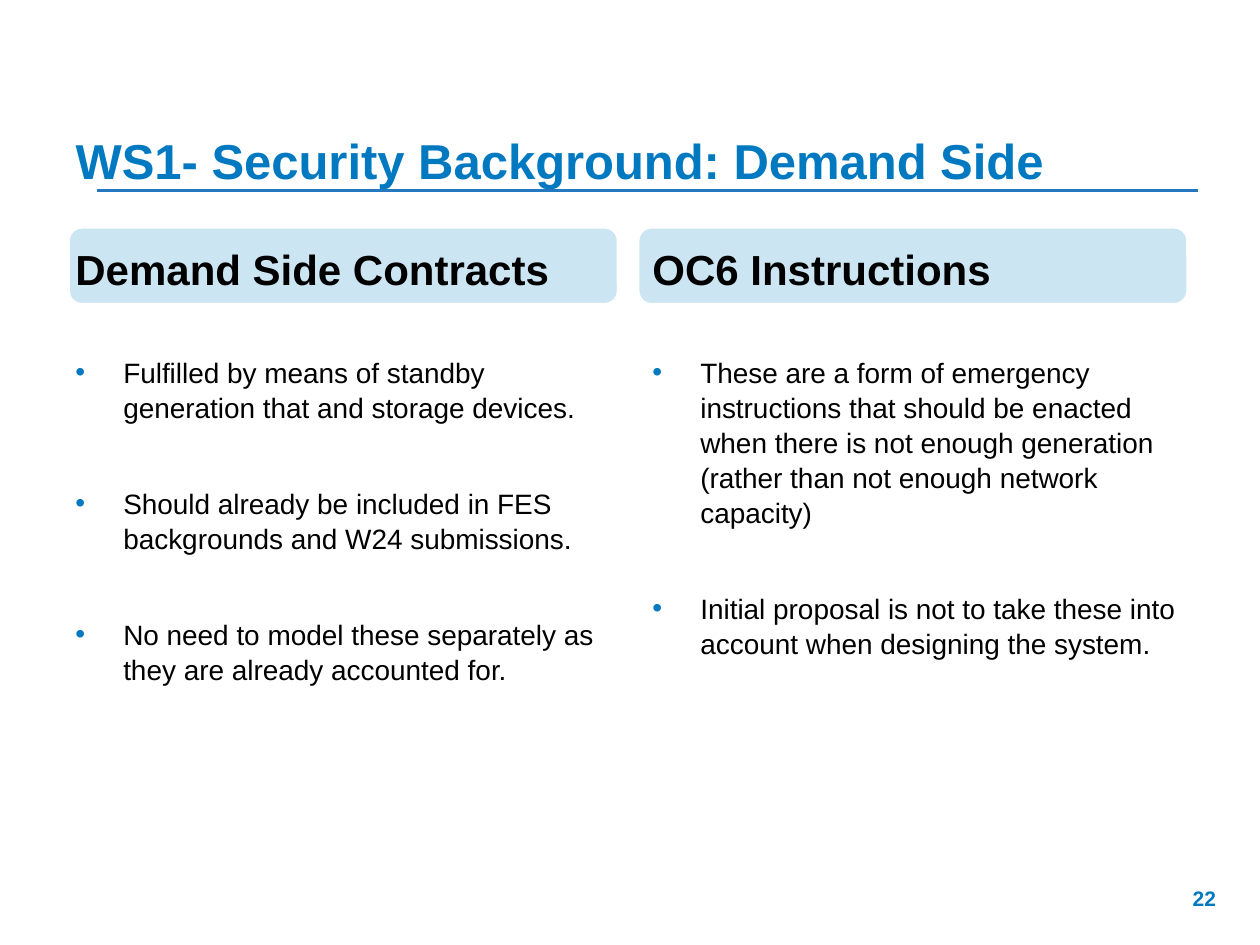
from pptx import Presentation
from pptx import util as u
from pptx.dml.color import RGBColor
from pptx.enum import shapes, text
from pptx.oxml.ns import qn
from lxml import etree

BLUE, PALE, RULE = "0079C1", "CCE5F2", "2478C0"
BLACK, WHITE = "000000", "FFFFFF"
COLS = [
    (0.5, 0.55, "Demand Side Contracts", [
        "Fulfilled by means of standby generation that and storage devices.",
        "Should already be included in FES backgrounds and W24 submissions.",
        "No need to model these separately as they are already accounted for."]),
    (5.08, 5.07, "OC6 Instructions", [
        "These are a form of emergency instructions that should be enacted "
        "when there is not enough generation (rather than not enough network capacity)",
        "Initial proposal is not to take these into account when designing the system."]),
]


def color(code):
    """Turn a hex string into a colour."""
    return RGBColor.from_string(code)


def bullet(par):
    """Give a paragraph a hanging blue bullet."""
    props = par._p.get_or_add_pPr()
    props.set("marL", str(u.Inches(0.38)))
    props.set("indent", str(-u.Inches(0.38)))
    tint = etree.SubElement(props, qn("a:buClr"))
    etree.SubElement(tint, qn("a:srgbClr"), val=BLUE)
    etree.SubElement(props, qn("a:buFont"), typeface="Arial")
    etree.SubElement(props, qn("a:buChar"), char="•")


class Page:
    """Hold the style and the current slide."""

    def __init__(self, deck, face="Arial"):
        """Add a title-only slide."""
        self.slide = deck.slides.add_slide(deck.slide_layouts[5])
        self.face = face

    def style(self, par, size, tone, bold):
        """Format the runs of a paragraph."""
        for run in par.runs:
            font = run.font
            font.name, font.size, font.bold = self.face, u.Pt(size), bold
            font.color.rgb = color(tone)

    def fill(self, shape, words, size, tone, bold=True, low=True, right=False):
        """Put one styled line into a shape."""
        frame = shape.text_frame
        frame.text = words
        frame.word_wrap = True
        frame.auto_size = text.MSO_AUTO_SIZE.NONE
        frame.vertical_anchor = text.MSO_ANCHOR.BOTTOM if low else text.MSO_ANCHOR.TOP
        par = frame.paragraphs[0]
        par.alignment = text.PP_ALIGN.RIGHT if right else text.PP_ALIGN.LEFT
        self.style(par, size, tone, bold)

    def title(self, words, x, y, w, h):
        """Place and format the title."""
        shape = self.slide.shapes.title
        shape.left, shape.top = u.Inches(x), u.Inches(y)
        shape.width, shape.height = u.Inches(w), u.Inches(h)
        self.fill(shape, words, 28, BLUE)

    def rule(self, x, y, end):
        """Draw a level line."""
        line = self.slide.shapes.add_connector(
            shapes.MSO_CONNECTOR.STRAIGHT,
            u.Inches(x), u.Inches(y), u.Inches(end), u.Inches(y))
        line.line.color.rgb = color(RULE)
        line.line.width = u.Pt(1.5)
        etree.SubElement(line._element.spPr, qn("a:effectLst"))

    def panel(self, x, y, w, h):
        """Draw a rounded heading panel."""
        shape = self.slide.shapes.add_shape(
            shapes.MSO_SHAPE.ROUNDED_RECTANGLE,
            u.Inches(x), u.Inches(y), u.Inches(w), u.Inches(h))
        shape.shadow.inherit = False
        shape.fill.solid()
        shape.fill.fore_color.rgb = color(PALE)
        shape.line.color.rgb = color(WHITE)
        shape.line.width = u.Pt(0.75)

    def label(self, words, x, y, w, h, size, tone, **opts):
        """Add a line of bold text."""
        box = self.slide.shapes.add_textbox(
            u.Inches(x), u.Inches(y), u.Inches(w), u.Inches(h))
        self.fill(box, words, size, tone, **opts)

    def points(self, items, x, y, w, h):
        """Add a bulleted list."""
        box = self.slide.shapes.add_textbox(
            u.Inches(x), u.Inches(y), u.Inches(w), u.Inches(h))
        frame = box.text_frame
        frame.word_wrap = True
        frame.margin_top = u.Inches(0.43)
        frame.text = "\n".join(items)
        for par in frame.paragraphs:
            par.line_spacing = 1.04
            par.space_after = u.Pt(35)
            bullet(par)
            self.style(par, 16, BLACK, False)


def main():
    """Build and save the slide."""
    deck = Presentation()
    deck.slide_width, deck.slide_height = u.Inches(10), u.Inches(7.5)
    page = Page(deck)
    page.rule(0.77, 1.51, 9.51)
    page.title("WS1- Security Background: Demand Side", 0.5, 0.3, 9, 1.25)
    for left, edge, head, items in COLS:
        page.panel(edge, 1.81, 4.35, 0.6)
        page.label(head, left, 1.68, 4.42, 0.7, 24, BLACK)
        page.points(items, left, 2.38, 4.42, 4.32)
    page.label("22", 7.42, 6.98, 2.33, 0.4, 12, BLUE, low=False, right=True)
    deck.save("out.pptx")


if __name__ == "__main__":
    main()
